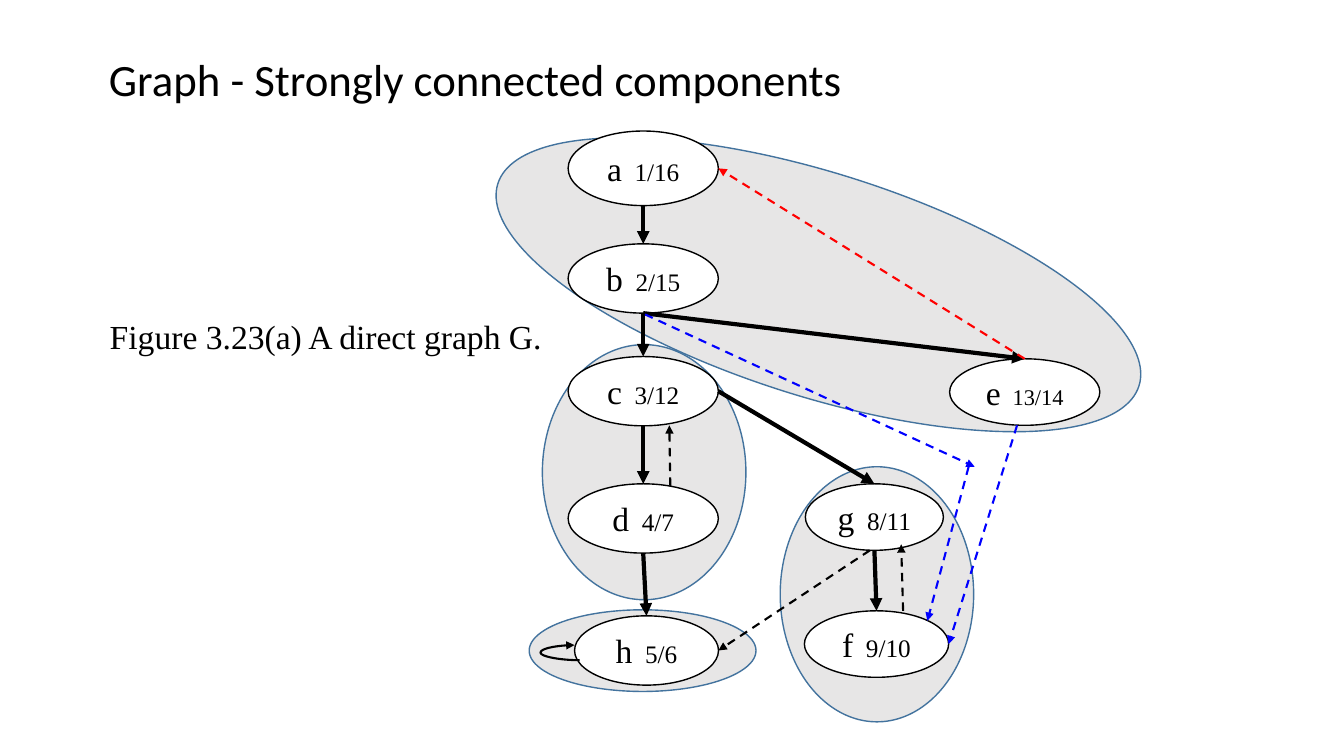
from dataclasses import dataclass
from typing import NamedTuple, Union

from lxml import etree
from pptx import Presentation
from pptx import util as u
from pptx.dml import color
from pptx.enum import dml, shapes, text
from pptx.oxml import ns

COLORS = {
    "black": "000000",
    "white": "FFFFFF",
    "gray": "E7E6E6",
    "steel": "43739E",
    "blue": "0000FF",
    "red": "FF0000",
}
SERIF = "Times New Roman"
SIDES = {"top": (0.5, 0), "left": (0, 0.5), "bottom": (0.5, 1), "right": (1, 0.5)}
TOP_SITE = 0

Spot = tuple[Union[str, float], Union[str, float]]


class Box(NamedTuple):
    left: float
    top: float
    width: float
    height: float


@dataclass(frozen=True)
class Component:
    box: Box
    rotation: float = 0


@dataclass(frozen=True)
class Node:
    name: str
    times: str
    box: Box
    times_size: int = 18


@dataclass(frozen=True)
class Edge:
    start: Spot
    end: Spot
    color: str = "black"
    dashed: bool = True
    width: float = 1.5


def tree_edge(start: str, side: str, end: str) -> Edge:
    return Edge((start, side), (end, "top"), dashed=False, width=3)


COMPONENTS = [
    Component(Box(387.4, 246.2, 145.4, 182.2)),
    Component(Box(378, 435.6, 162, 58.3)),
    Component(Box(504.7, -36.7, 159.8, 480.2), 287.5),
    Component(Box(557.3, 333.4, 138.2, 182.2)),
]
NODES = [
    Node("a", "1/16", Box(405.8, 93.6, 107.3, 53.3)),
    Node("b", "2/15", Box(405.8, 174.2, 107.3, 49.5)),
    Node("c", "3/12", Box(405.8, 254.7, 107.3, 49.5)),
    Node("d", "4/7", Box(405.8, 345.6, 107.3, 49.5)),
    Node("h", "5/6", Box(410.4, 439.9, 102.8, 49.5)),
    Node("g", "8/11", Box(575.3, 345.6, 98.6, 47.5)),
    Node("f", "9/10", Box(574.6, 436.3, 103, 47.5)),
    Node("e", "13/14", Box(678.3, 256.3, 107.3, 47.5), 16),
]
EDGES = [
    tree_edge("a", "bottom", "b"),
    tree_edge("b", "bottom", "c"),
    tree_edge("c", "bottom", "d"),
    tree_edge("d", "bottom", "h"),
    tree_edge("b", "bottom", "e"),
    tree_edge("c", "right", "g"),
    tree_edge("g", "bottom", "f"),
    Edge((621.4, 393.1), ("h", "right")),
    Edge((478.8, 347), (478.1, 303.8)),
    Edge((726.5, 303.8), ("f", "right"), "blue"),
    Edge((460.8, 224.6), (696.2, 333.4), "blue"),
    Edge(("e", "top"), ("a", "right"), "red"),
    Edge((691.9, 333.4), (662.4, 443.5), "blue"),
    Edge((645.1, 436.3), (643.7, 388.8)),
]
SELF_LOOP = Edge((414, 471.6), (410.4, 460.8), dashed=False)
LOOP_BEND = 776100


def rgb(name: str) -> color.RGBColor:
    return color.RGBColor.from_string(COLORS[name])


def apply(target, values: dict) -> None:
    for key, value in values.items():
        setattr(target, key, value)


def add_run(p, words: str, size: float, font: str = SERIF) -> None:
    r = p.add_run()
    r.text = words
    apply(r.font, {"name": font, "size": u.Pt(size), "bold": False})
    r.font.color.rgb = rgb("black")


def add_ellipse(slide, box: Box, fill: str, line: str):
    sp = slide.shapes.add_shape(shapes.MSO_SHAPE.OVAL, *map(u.Pt, box))
    sp.shadow.inherit = False
    sp.fill.solid()
    sp.fill.fore_color.rgb = rgb(fill)
    sp.line.color.rgb = rgb(line)
    sp.line.width = u.Pt(1)
    return sp


def add_node(slide, node: Node):
    sp = add_ellipse(slide, node.box, "white", "black")
    tf = sp.text_frame
    apply(tf, {"word_wrap": False, "vertical_anchor": text.MSO_ANCHOR.MIDDLE})
    p = tf.paragraphs[0]
    p.alignment = text.PP_ALIGN.CENTER
    add_run(p, node.name, 24)
    add_run(p, " ", 18)
    add_run(p, " " + node.times, node.times_size)
    return sp


def locate(spot: Spot, ovals: dict) -> tuple[int, int]:
    if spot[0] not in ovals:
        return u.Pt(spot[0]), u.Pt(spot[1])
    sp = ovals[spot[0]]
    dx, dy = SIDES[spot[1]]
    return int(sp.left + dx * sp.width), int(sp.top + dy * sp.height)


def add_edge(slide, edge: Edge, ovals: dict, kind=shapes.MSO_CONNECTOR.STRAIGHT):
    cxn = slide.shapes.add_connector(
        kind, *locate(edge.start, ovals), *locate(edge.end, ovals)
    )
    for spot, join in ((edge.start, cxn.begin_connect), (edge.end, cxn.end_connect)):
        if spot[1] == "top":
            join(ovals[spot[0]], TOP_SITE)
    cxn.line.color.rgb = rgb(edge.color)
    cxn.line.width = u.Pt(edge.width)
    if edge.dashed:
        cxn.line.dash_style = dml.MSO_LINE.DASH
    properties = cxn.element.spPr
    etree.SubElement(properties.find(ns.qn("a:ln")), ns.qn("a:tailEnd"), type="triangle")
    etree.SubElement(properties, ns.qn("a:effectLst"))
    return cxn


def add_self_loop(slide, ovals: dict) -> None:
    cxn = add_edge(slide, SELF_LOOP, ovals, shapes.MSO_CONNECTOR.CURVE)
    geometry = cxn.element.spPr.find(ns.qn("a:prstGeom"))
    guides = geometry.find(ns.qn("a:avLst"))
    if guides is None:
        guides = etree.SubElement(geometry, ns.qn("a:avLst"))
    etree.SubElement(guides, ns.qn("a:gd"), name="adj1", fmla=f"val {LOOP_BEND}")


def write_line(sp, words: str, size: float, font: str, frame: dict) -> None:
    apply(sp.text_frame, {"auto_size": text.MSO_AUTO_SIZE.SHAPE_TO_FIT_TEXT, **frame})
    p = sp.text_frame.paragraphs[0]
    apply(p, {"alignment": text.PP_ALIGN.LEFT, "line_spacing": 1.0})
    add_run(p, words, size, font)


def main() -> None:
    prs = Presentation()
    apply(prs, {"slide_width": u.Pt(960), "slide_height": u.Pt(540)})
    s = prs.slides.add_slide(prs.slide_layouts[5])

    title = s.shapes.title
    title_box = Box(70.6, 33.1, 543.6, 46.1)
    apply(title, {key: u.Pt(value) for key, value in title_box._asdict().items()})
    write_line(title, "Graph - Strongly connected components", 32, "Calibri",
               {"word_wrap": False, "vertical_anchor": text.MSO_ANCHOR.TOP})

    for component in COMPONENTS:
        sp = add_ellipse(s, component.box, "gray", "steel")
        sp.rotation = component.rotation
    ovals = {node.name: add_node(s, node) for node in NODES}
    for edge in EDGES:
        add_edge(s, edge, ovals)
    add_self_loop(s, ovals)

    caption = s.shapes.add_textbox(*map(u.Pt, Box(71.3, 221.8, 389.5, 36)))
    write_line(caption, "Figure 3.23(a) A direct graph G.", 24, SERIF,
               {"word_wrap": True, "vertical_anchor": text.MSO_ANCHOR.MIDDLE})
    prs.save("out.pptx")


if __name__ == "__main__":
    main()
